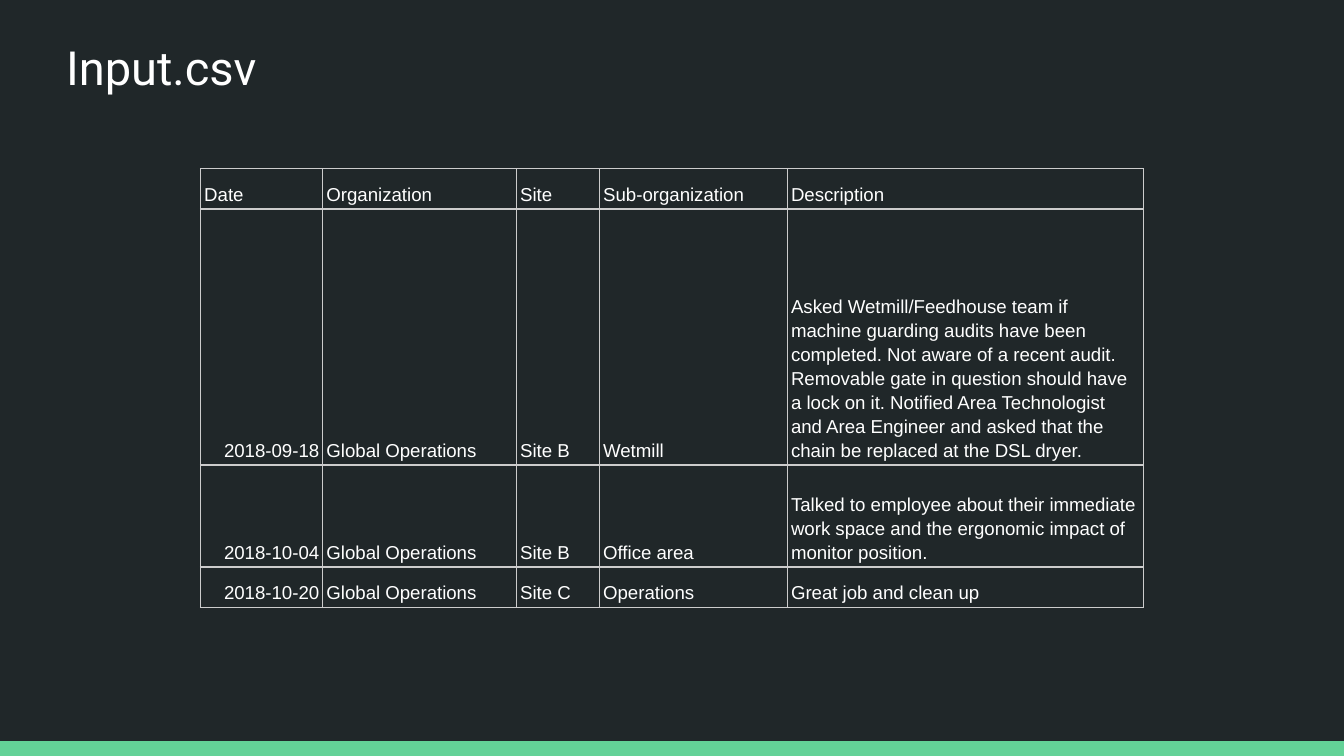
from lxml import etree
from pptx import Presentation
from pptx.dml.color import RGBColor
from pptx.enum.shapes import MSO_SHAPE
from pptx.enum.text import MSO_ANCHOR, PP_ALIGN
from pptx.oxml.ns import qn
from pptx.util import Cm, Pt

RECTANGLE = MSO_SHAPE.RECTANGLE
MIDDLE, BOTTOM = MSO_ANCHOR.MIDDLE, MSO_ANCHOR.BOTTOM
LEFT, RIGHT = PP_ALIGN.LEFT, PP_ALIGN.RIGHT

COLORS = {"background": "202729", "accent": "63D297", "text": "FFFFFF", "border": "CCCCCC"}
SLIDE_WIDTH, SLIDE_HEIGHT = Cm(25.4), Cm(14.29)
COLUMN_WIDTHS = [2.31, 3.66, 1.57, 3.55, 6.73]
ROW_HEIGHTS = [0.76, 4.84, 1.93, 0.76]
RECORDS = [
    ("Date", "Organization", "Site", "Sub-organization", "Description"),
    ("2018-09-18", "Global Operations", "Site B", "Wetmill",
     "Asked Wetmill/Feedhouse team if machine guarding audits have been completed. "
     "Not aware of a recent audit. Removable gate in question should have a lock on it. "
     "Notified Area Technologist and Area Engineer and asked that the chain be replaced "
     "at the DSL dryer."),
    ("2018-10-04", "Global Operations", "Site B", "Office area",
     "Talked to employee about their immediate work space and the ergonomic impact of "
     "monitor position."),
    ("2018-10-20", "Global Operations", "Site C", "Operations", "Great job and clean up"),
]


def color(name):
    """Return the named palette colour."""
    return RGBColor.from_string(COLORS[name])


def write_text(frame, text, *, font, size, align=LEFT, spacing=1.0):
    """Put one formatted paragraph into a text frame."""
    frame.word_wrap = True
    paragraph = frame.paragraphs[0]
    paragraph.alignment = align
    paragraph.line_spacing = spacing
    run = paragraph.add_run()
    run.text = text
    run.font.name = font
    run.font.size = Pt(size)
    run.font.color.rgb = color("text")


def set_margins(holder, margin):
    """Give a cell or text frame the same margin on every side."""
    holder.margin_left = holder.margin_right = margin
    holder.margin_top = holder.margin_bottom = margin


def draw_borders(cell):
    """Draw a thin line along all four sides of a cell."""
    properties = cell._tc.get_or_add_tcPr()
    for side in ("lnL", "lnR", "lnT", "lnB"):
        line = etree.SubElement(properties, qn(f"a:{side}"), w=str(Pt(0.75)))
        fill = etree.SubElement(line, qn("a:solidFill"))
        etree.SubElement(fill, qn("a:srgbClr"), val=COLORS["border"])


def add_footer_bar(slide, left, top, width, height):
    """Draw the accent bar."""
    bar = slide.shapes.add_shape(RECTANGLE, left, top, width, height)
    bar.shadow.inherit = False
    bar.fill.solid()
    bar.fill.fore_color.rgb = color("accent")
    bar.line.fill.background()


def place_title(slide, text, left, top, width, height):
    """Move and fill the title placeholder."""
    title = slide.shapes.title
    title.left, title.top, title.width, title.height = left, top, width, height
    frame = title.text_frame
    set_margins(frame, Cm(0.25))
    frame.vertical_anchor = MIDDLE
    write_text(frame, text, font="Roboto", size=25.2)


def add_records_table(slide, left, top, width, height):
    """Draw the records, sharing the box in proportion to the row and column sizes."""
    table = slide.shapes.add_table(
        len(RECORDS), len(COLUMN_WIDTHS), left, top, width, height).table
    table.first_row = table.horz_banding = False
    for column, share in zip(table.columns, COLUMN_WIDTHS):
        column.width = int(width * share / sum(COLUMN_WIDTHS))
    for row, share in zip(table.rows, ROW_HEIGHTS):
        row.height = int(height * share / sum(ROW_HEIGHTS))
    for row_index, record in enumerate(RECORDS):
        for column_index, value in enumerate(record):
            cell = table.cell(row_index, column_index)
            draw_borders(cell)
            cell.fill.background()
            cell.vertical_anchor = BOTTOM
            set_margins(cell, Cm(0.07))
            is_date = row_index > 0 and column_index == 0
            write_text(cell.text_frame, value, font="Arial", size=10,
                       align=RIGHT if is_date else LEFT, spacing=1.15)


def main():
    """Build and save the slide."""
    deck = Presentation()
    deck.slide_width, deck.slide_height = SLIDE_WIDTH, SLIDE_HEIGHT
    slide = deck.slides.add_slide(deck.slide_layouts[5])
    slide.background.fill.solid()
    slide.background.fill.fore_color.rgb = color("background")
    bar_height = Cm(0.28)
    add_footer_bar(slide, 0, SLIDE_HEIGHT - bar_height, SLIDE_WIDTH, bar_height)
    place_title(slide, "Input.csv", Cm(1), Cm(0.46), Cm(23.67), Cm(1.6))
    add_records_table(slide, Cm(3.79), Cm(3.19),
                      Cm(sum(COLUMN_WIDTHS)), Cm(sum(ROW_HEIGHTS)))
    deck.save("out.pptx")


if __name__ == "__main__":
    main()
